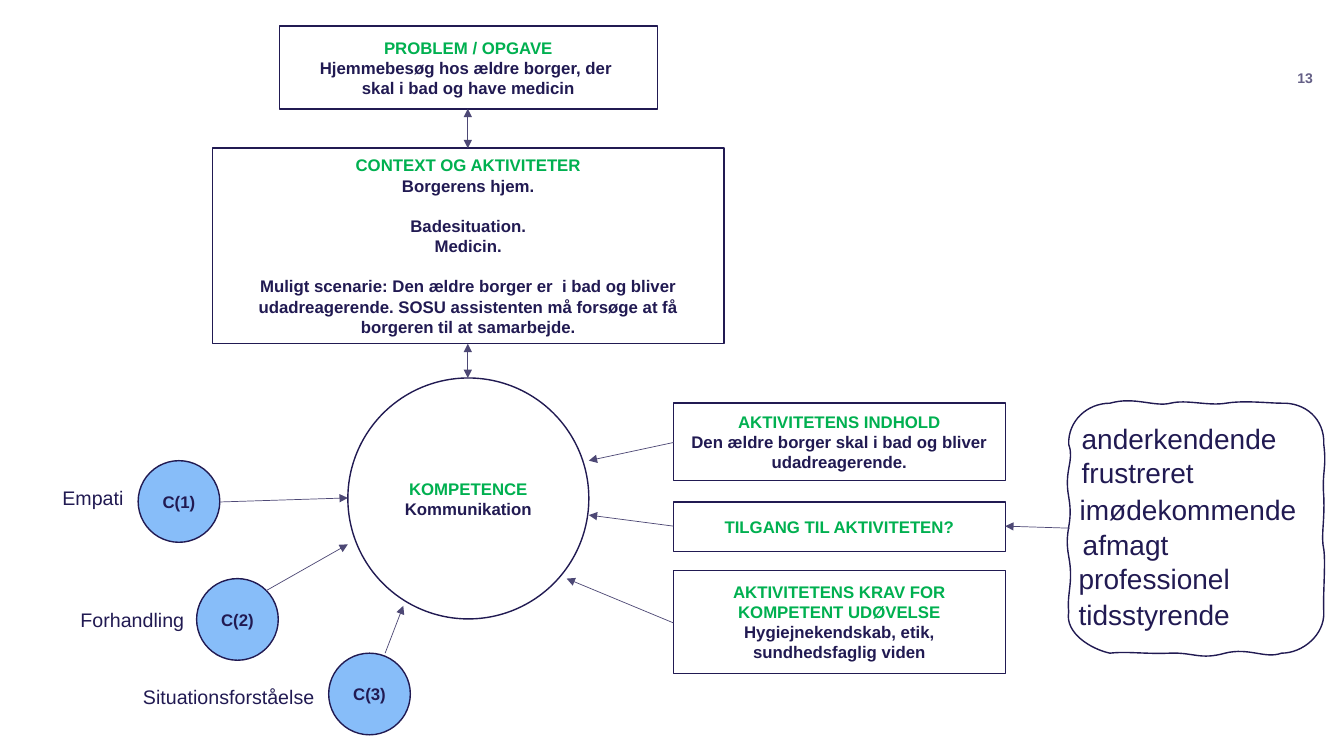
import dataclasses

import lxml.etree
import pptx
import pptx.dml.color
import pptx.enum.shapes
import pptx.enum.text
import pptx.oxml.ns
import pptx.util

PX = 9144
SHAPE = pptx.enum.shapes.MSO_SHAPE
ALIGN = pptx.enum.text.PP_ALIGN
ANCHOR = pptx.enum.text.MSO_ANCHOR


def rgb(code):
    return pptx.dml.color.RGBColor.from_string(code)


@dataclasses.dataclass(frozen=True)
class Theme:
    font: str = "Arial"
    ink: object = rgb("211A52")
    heading: object = rgb("00B050")
    paper: object = rgb("FFFFFF")
    skill: object = rgb("87BDF9")
    arrow: object = rgb("4D4875")
    page: object = rgb("645F86")
    page_size: int = 10
    body_size: int = 12
    label_size: int = 14
    word_size: int = 20
    paragraph_gap: float = 14.4
    outline: float = 1
    arrow_line: float = 0.5


THEME = Theme()

CLOUD_START = (1060, 441)
CLOUD_CURVES = [
    ((1059, 418), (1078, 400), (1101, 400)),
    ((1125, 393), (1145, 404), (1161, 400)),
    ((1177, 396), (1198, 403), (1216, 400)),
    ((1234, 397), (1259, 400), (1271, 400)),
    ((1294, 399), (1314, 415), (1313, 441)),
    ((1316, 465), (1311, 468), (1313, 493)),
    ((1314, 518), (1310, 532), (1313, 545)),
    ((1315, 559), (1312, 593), (1313, 607)),
    ((1314, 630), (1292, 648), (1271, 648)),
    ((1255, 654), (1239, 642), (1215, 648)),
    ((1190, 655), (1184, 647), (1160, 648)),
    ((1136, 649), (1117, 646), (1101, 648)),
    ((1082, 644), (1056, 628), (1060, 607)),
    ((1058, 588), (1065, 578), (1060, 552)),
    ((1055, 525), (1065, 521), (1060, 493)),
    ((1055, 466), (1066, 457), (1060, 441)),
]


def px(*lengths):
    return [pptx.util.Emu(length * PX) for length in lengths]


def apply_format(target, values):
    for name, value in values.items():
        setattr(target, name, value)


def write(paragraph, text, size, color, bold=False, align=ALIGN.LEFT):
    paragraph.alignment = align
    run = paragraph.add_run()
    run.text = text
    apply_format(run.font, {"name": THEME.font, "size": pptx.util.Pt(size), "bold": bold})
    run.font.color.rgb = color


def outline(shape):
    shape.shadow.inherit = False
    shape.line.color.rgb = THEME.ink
    shape.line.width = pptx.util.Pt(THEME.outline)


def add_node(slide, kind, place, heading="", body=(), fill=THEME.paper, gaps=()):
    node = slide.shapes.add_shape(kind, *px(*place))
    outline(node)
    node.fill.solid()
    node.fill.fore_color.rgb = fill
    frame = node.text_frame
    apply_format(frame, {"word_wrap": True, "vertical_anchor": ANCHOR.MIDDLE})
    lines = [(heading, THEME.heading)] if heading else []
    lines += [(text, THEME.ink) for text in body]
    for index, (text, color) in enumerate(lines):
        paragraph = frame.add_paragraph() if index else frame.paragraphs[0]
        if text in gaps:
            paragraph.space_before = pptx.util.Pt(THEME.paragraph_gap)
        write(paragraph, text, THEME.body_size, color, True, ALIGN.CENTER)


def add_label(slide, text, place, size):
    frame = slide.shapes.add_textbox(*px(*place)).text_frame
    frame.word_wrap = True
    write(frame.paragraphs[0], text, size, THEME.ink)


def add_page_number(slide, number):
    frame = slide.shapes.add_textbox(*px(1240, 65, 62, 25)).text_frame
    margins = dict.fromkeys(("margin_left", "margin_top", "margin_right", "margin_bottom"), 0)
    apply_format(frame, {**margins, "word_wrap": True, "vertical_anchor": ANCHOR.MIDDLE})
    write(frame.paragraphs[0], number, THEME.page_size, THEME.page, True, ALIGN.RIGHT)


def add_arrow(slide, start, end, both_ways=False):
    arrow = slide.shapes.add_connector(
        pptx.enum.shapes.MSO_CONNECTOR.STRAIGHT, *px(*start, *end))
    arrow.line.color.rgb = THEME.arrow
    arrow.line.width = pptx.util.Pt(THEME.arrow_line)
    line = arrow.line._get_or_add_ln()
    for tag in ("a:headEnd", "a:tailEnd") if both_ways else ("a:tailEnd",):
        lxml.etree.SubElement(line, pptx.oxml.ns.qn(tag), type="triangle")
    lxml.etree.SubElement(arrow._element.spPr, pptx.oxml.ns.qn("a:effectLst"))


def add_cloud(slide):
    qn = pptx.oxml.ns.qn
    builder = slide.shapes.build_freeform(*px(*CLOUD_START))
    builder.add_line_segments([px(*curve[-1]) for curve in CLOUD_CURVES], close=True)
    cloud = builder.convert_to_shape()
    outline(cloud)
    cloud.fill.background()
    segments = list(cloud._element.iter(qn("a:lnTo")))
    for segment, curve in zip(segments, CLOUD_CURVES):
        bend = lxml.etree.Element(qn("a:cubicBezTo"))
        for point in curve:
            x, y = px(*point)
            lxml.etree.SubElement(bend, qn("a:pt"), x=str(x - cloud.left), y=str(y - cloud.top))
        segment.getparent().replace(segment, bend)


def main():
    deck = pptx.Presentation()
    deck.slide_width, deck.slide_height = px(1333, 750)
    slide = deck.slides.add_slide(deck.slide_layouts[6])
    add_page_number(slide, "13")

    for number, (left, top) in enumerate([(137, 457), (195, 574), (326, 648)], 1):
        add_node(slide, SHAPE.OVAL, (left, top, 81, 81),
                 body=[f"C({number})"], fill=THEME.skill)
    add_node(slide, SHAPE.OVAL, (345, 375, 239, 239), "KOMPETENCE", ["Kommunikation"])

    activities = [
        (400, 77, "AKTIVITETENS INDHOLD",
         ["Den ældre borger skal i bad og bliver udadreagerende."]),
        (498, 49, "TILGANG TIL AKTIVITETEN?", []),
        (566, 102, "AKTIVITETENS KRAV FOR KOMPETENT UDØVELSE",
         ["Hygiejnekendskab, etik, sundhedsfaglig viden"]),
    ]
    for top, height, heading, body in activities:
        add_node(slide, SHAPE.RECTANGLE, (668, top, 329, height), heading, body)

    add_node(slide, SHAPE.RECTANGLE, (277, 26, 375, 82), "PROBLEM / OPGAVE",
             ["Hjemmebesøg hos ældre borger, der ", "skal i bad og have medicin"])
    scenario = ("Muligt scenarie: Den ældre borger er  i bad og bliver udadreagerende. "
                "SOSU assistenten må forsøge at få borgeren til at samarbejde.")
    add_node(slide, SHAPE.RECTANGLE, (211, 147, 507, 194), "CONTEXT OG AKTIVITETER",
             ["Borgerens hjem.", "Badesituation.", "Medicin.", scenario],
             gaps=("Badesituation.", scenario))

    for text, left, top, width in [("Empati", 52, 477, 98),
                                   ("Forhandling", 70, 598, 194),
                                   ("Situationsforståelse", 132, 675, 194)]:
        add_label(slide, text, (left, top, width, 34), THEME.label_size)

    for text, left, top, width in [("afmagt", 1064, 518, 149), ("professionel", 1060, 552, 234),
                                   ("tidsstyrende", 1060, 588, 234),
                                   ("imødekommende", 1061, 484, 239),
                                   ("anderkendende", 1063, 413, 220),
                                   ("frustreret", 1063, 447, 154)]:
        add_label(slide, text, (left, top, width, 44), THEME.word_size)
    add_cloud(slide)

    for start, end in [((1061, 524), (997, 522)), ((668, 439), (584, 457)),
                       ((668, 522), (584, 511)), ((668, 618), (562, 574)),
                       ((218, 498), (345, 494)), ((264, 586), (345, 540)),
                       ((382, 648), (400, 601))]:
        add_arrow(slide, start, end)
    for top, bottom in [(108, 147), (341, 375)]:
        add_arrow(slide, (464, top), (464, bottom), both_ways=True)

    deck.save("out.pptx")


if __name__ == "__main__":
    main()
